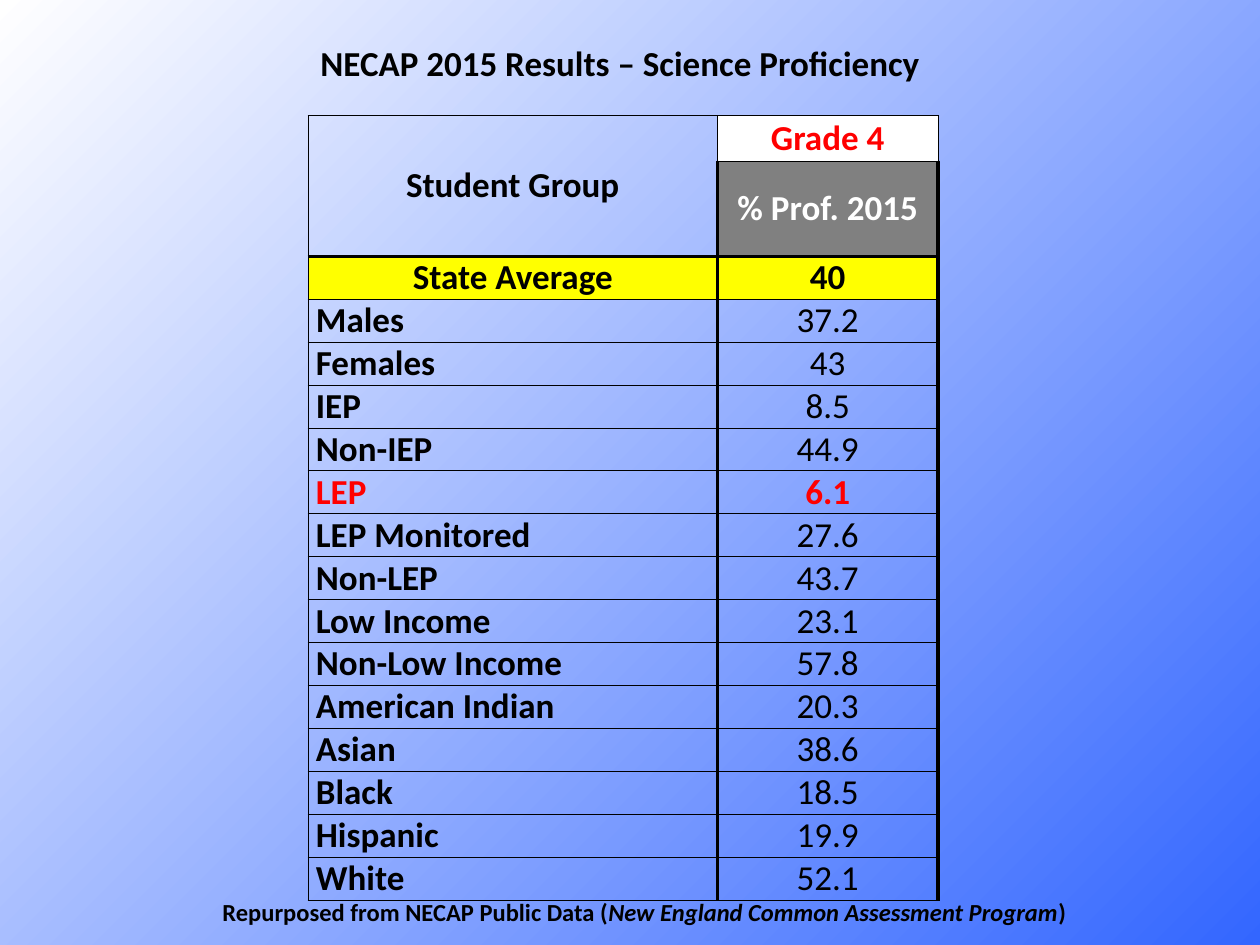
from lxml.etree import SubElement
from pptx import Presentation
from pptx.dml.color import RGBColor
from pptx.enum.text import MSO_ANCHOR, MSO_AUTO_SIZE, PP_ALIGN
from pptx.oxml.ns import qn
from pptx.util import Pt

BLACK = RGBColor(0, 0, 0)
WHITE = RGBColor(255, 255, 255)
RED = RGBColor(255, 0, 0)
GRAY = RGBColor(128, 128, 128)
YELLOW = RGBColor(255, 255, 0)
BLUE = RGBColor(0x33, 0x66, 0xFF)


def add_run(para, text, size=20, color=BLACK, bold=True, italic=False):
    run = para.add_run()
    run.text = text
    font = run.font
    font.name = "Calibri"
    font.size = Pt(size)
    font.bold = bold
    font.italic = italic
    font.color.rgb = color


def style(cell, text, color, bold, align, fill, lines):
    cell.margin_left = cell.margin_right = 0
    cell.margin_top = cell.margin_bottom = 0
    cell.vertical_anchor = MSO_ANCHOR.MIDDLE
    props = cell._tc.get_or_add_tcPr()
    for side, width in zip("LRTB", lines):
        line = SubElement(props, qn(f"a:ln{side}"), w=str(Pt(width)))
        solid = SubElement(line, qn("a:solidFill"))
        SubElement(solid, qn("a:srgbClr"), val=str(BLACK))
    if fill is None:
        cell.fill.background()
    else:
        cell.fill.solid()
        cell.fill.fore_color.rgb = fill
    if text:
        para = cell.text_frame.paragraphs[0]
        para.alignment = align
        add_run(para, text, color=color, bold=bold)


deck = Presentation()
deck.slide_width = Pt(720)
deck.slide_height = Pt(540)
slide = deck.slides.add_slide(deck.slide_layouts[6])

back = slide.background.fill
back.gradient()
for stop, color, place in zip(back.gradient_stops, (BLUE, WHITE), (0, 1)):
    stop.color.rgb = color
    stop.position = place
grad = slide.element.find(".//" + qn("a:gradFill"))
SubElement(grad.find(".//" + qn("a:srgbClr")), qn("a:alpha"), val="60000")
grad.remove(grad.find(qn("a:lin")))
shade = SubElement(grad, qn("a:path"), path="circle")
SubElement(shade, qn("a:fillToRect"), l="100000", t="100000")

groups = [
    ("Males", "37.2"), ("Females", "43"), ("IEP", "8.5"),
    ("Non-IEP", "44.9"), ("LEP", "6.1"), ("LEP Monitored", "27.6"),
    ("Non-LEP", "43.7"), ("Low Income", "23.1"),
    ("Non-Low Income", "57.8"), ("American Indian", "20.3"),
    ("Asian", "38.6"), ("Black", "18.5"), ("Hispanic", "19.9"),
    ("White", "52.1"),
]
heights = [26, 54.5] + [22.5] * (len(groups) + 1)
frame = slide.shapes.add_table(len(heights), 2, Pt(176), Pt(66),
                               Pt(360), Pt(sum(heights)))
table = frame.table
table.first_row = False
table.horz_banding = False
for col, width in zip(table.columns, (234, 126)):
    col.width = Pt(width)
for row, height in zip(table.rows, heights):
    row.height = Pt(height)
table.cell(0, 0).merge(table.cell(1, 0))

MID, LEFT = PP_ALIGN.CENTER, PP_ALIGN.LEFT
rows = [
    (("Student Group", BLACK, True, MID, None, (0.5, 0.5, 0.5, 2)),
     ("Grade 4", RED, True, MID, WHITE, (0.5, 0.5, 0.5, 0.5))),
    (("", BLACK, True, MID, None, (0.5, 1.5, 0.5, 2)),
     ("% Prof. 2015", WHITE, True, MID, GRAY, (1.5, 2, 0.5, 2))),
    (("State Average", BLACK, True, MID, YELLOW, (0.5, 1.5, 2, 0.5)),
     ("40", BLACK, True, MID, YELLOW, (1.5, 2, 2, 0.5))),
]
for name, score in groups:
    key = name == "LEP"
    color = RED if key else BLACK
    rows.append((
        (" " + name, color, True, LEFT, None, (0.5, 1.5, 0.5, 0.5)),
        (score, color, key, MID, None, (1.5, 2, 0.5, 0.5))))
for r, row in enumerate(rows):
    for c, item in enumerate(row):
        style(table.cell(r, c), *item)

notes = [
    ((176, 20, 360, 31.5), 20,
     [("NECAP 2015 Results – Science Proficiency", False)]),
    ((120, 509, 502.5, 24.25), 14,
     [("Repurposed from NECAP Public Data (", False),
      ("New England Common Assessment Program", True), (")", False)]),
]
for place, size, parts in notes:
    box = slide.shapes.add_textbox(*map(Pt, place))
    text = box.text_frame
    text.word_wrap = False
    text.auto_size = MSO_AUTO_SIZE.SHAPE_TO_FIT_TEXT
    for words, italic in parts:
        add_run(text.paragraphs[0], words, size, italic=italic)

deck.save("out.pptx")
